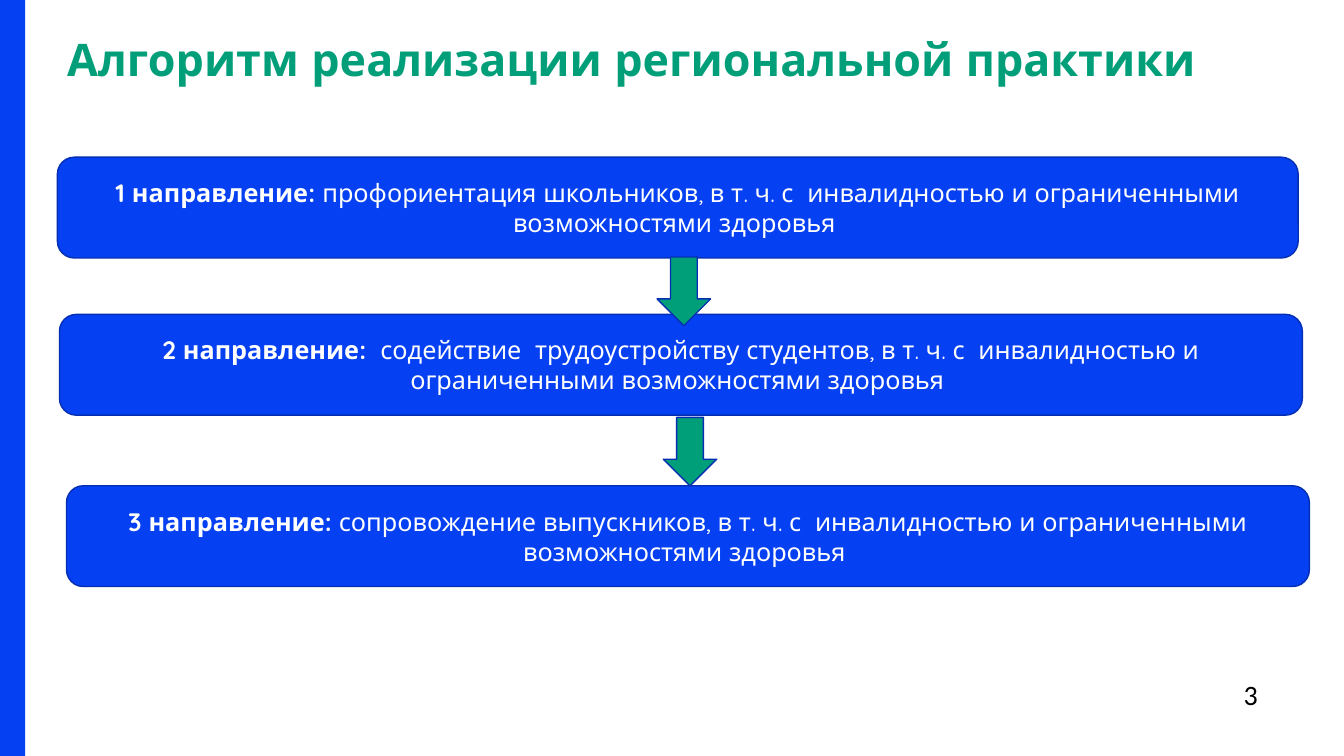
from pptx import Presentation
from pptx.dml.color import RGBColor
from pptx.enum import shapes, text
from pptx.util import Pt

COLORS = {
    "blue": "0540F2",
    "outline": "042FB3",
    "title": "009F79",
    "arrow": "009F7A",
    "white": "FFFFFF",
    "black": "000000",
}
HEADING_FONT = "Quicksand"
BOX_HEIGHT = 72

# left, top, width, heading, description
DIRECTIONS = [
    (41, 112.3, 886.3, "1 направление: ",
     "профориентация школьников, в т. ч. с  инвалидностью и ограниченными возможностями здоровья "),
    (42.5, 224.6, 887.8, "2 направление:  ",
     "содействие  трудоустройству студентов, в т. ч. с  инвалидностью и ограниченными возможностями здоровья "),
    (47.5, 347, 887.8, "3 направление: ",
     "сопровождение выпускников, в т. ч. с  инвалидностью и ограниченными возможностями здоровья "),
]
ARROWS = [(469.4, 183.6), (473.8, 298.1)]


def rgb(name):
    return RGBColor.from_string(COLORS[name])


def add_run(paragraph, content, size, color, bold=False, font=HEADING_FONT):
    run = paragraph.add_run()
    run.text = content
    run.font.name = font
    run.font.size = Pt(size)
    run.font.bold = bold
    run.font.color.rgb = rgb(color)


def add_filled_shape(slide, kind, left, top, width, height, fill, outline=None):
    shape = slide.shapes.add_shape(kind, Pt(left), Pt(top), Pt(width), Pt(height))
    shape.shadow.inherit = False
    shape.fill.solid()
    shape.fill.fore_color.rgb = rgb(fill)
    if outline:
        shape.line.color.rgb = rgb(outline)
        shape.line.width = Pt(1)
    else:
        shape.line.fill.background()
    return shape


def add_title(slide, content):
    title = slide.shapes.title
    title.left, title.top, title.width, title.height = Pt(48), Pt(29), Pt(859), Pt(35)
    frame = title.text_frame
    frame.margin_left = frame.margin_top = frame.margin_right = frame.margin_bottom = 0
    frame.auto_size = text.MSO_AUTO_SIZE.NONE
    frame.vertical_anchor = text.MSO_ANCHOR.TOP
    frame.word_wrap = True
    paragraph = frame.paragraphs[0]
    paragraph.alignment = text.PP_ALIGN.LEFT
    paragraph.line_spacing = Pt(32)
    paragraph.space_before = Pt(0)
    add_run(paragraph, content, 32, "title", bold=True)


def add_direction(slide, left, top, width, heading, description):
    box = add_filled_shape(slide, shapes.MSO_SHAPE.ROUNDED_RECTANGLE,
                           left, top, width, BOX_HEIGHT, "blue", "outline")
    frame = box.text_frame
    frame.word_wrap = True
    frame.vertical_anchor = text.MSO_ANCHOR.MIDDLE
    paragraph = frame.paragraphs[0]
    paragraph.alignment = text.PP_ALIGN.CENTER
    add_run(paragraph, heading, 18, "white", bold=True)
    add_run(paragraph, description, 18, "white")


def add_page_number(slide, number):
    box = slide.shapes.add_textbox(Pt(881.3), Pt(480.2), Pt(38.2), Pt(31.7))
    box.text_frame.word_wrap = True
    add_run(box.text_frame.paragraphs[0], number, 20, "black", font="Calibri")


def main():
    presentation = Presentation()
    presentation.slide_width, presentation.slide_height = Pt(960), Pt(540)
    slide = presentation.slides.add_slide(presentation.slide_layouts[5])

    add_page_number(slide, "3")
    add_title(slide, "Алгоритм реализации региональной практики")
    add_filled_shape(slide, shapes.MSO_SHAPE.RECTANGLE, 0, 0, 18, 540, "blue")
    for direction in DIRECTIONS:
        add_direction(slide, *direction)
    for left, top in ARROWS:
        add_filled_shape(slide, shapes.MSO_SHAPE.DOWN_ARROW, left, top, 38.2, 49, "arrow", "outline")

    presentation.save("out.pptx")


if __name__ == "__main__":
    main()
